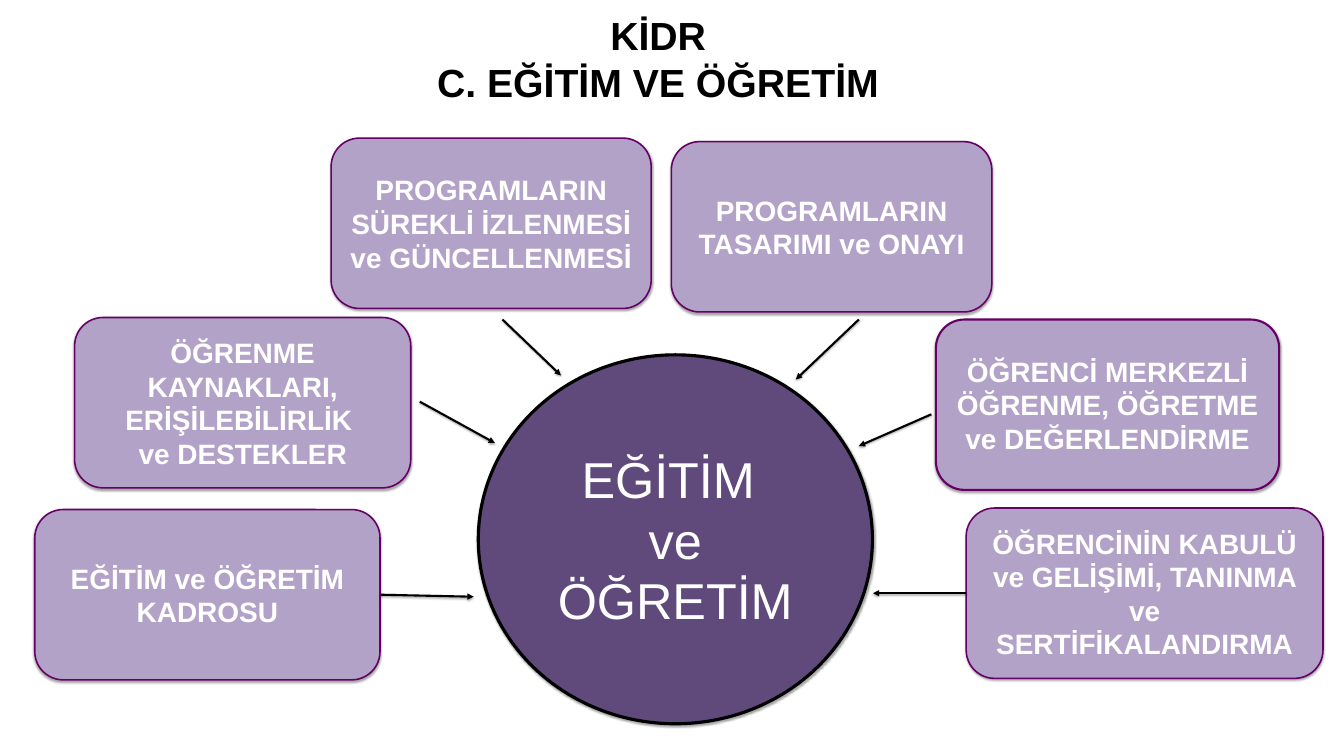
"""Build the hub diagram of the education and teaching criteria."""
from lxml import etree
from pptx import Presentation
from pptx import util as u
from pptx.dml.color import RGBColor
from pptx.enum import shapes, text
from pptx.oxml import parse_xml
from pptx.oxml.ns import nsdecls, qn

BOX_HEIGHT = 10.14
BOXES = [
    (4.44, 18.9, 20.01, 2.25, "ÖĞRENME KAYNAKLARI, ERİŞİLEBİLİRLİK \nve DESTEKLER"),
    (19.71, 8.22, 19.05, 2.25, "PROGRAMLARIN SÜREKLİ İZLENMESİ \nve GÜNCELLENMESİ"),
    (2.07, 30.33, 20.55, 2.25, "EĞİTİM ve ÖĞRETİM KADROSU"),
    (39.96, 8.43, 19.08, 2.25, "PROGRAMLARIN TASARIMI ve ONAYI"),
    (57.51, 30.24, 21.24, 2.25, "ÖĞRENCİNİN KABULÜ ve GELİŞİMİ, TANINMA ve SERTİFİKALANDIRMA"),
    (55.71, 19.02, 20.43, 3, "ÖĞRENCİ MERKEZLİ ÖĞRENME, ÖĞRETME ve DEĞERLENDİRME"),
]
ARROWS = [
    ((51.12, 19.02), (47.37, 22.59)),
    ((55.44, 24.66), (51.12, 26.55)),
    ((29.91, 19.02), (33.39, 22.35)),
    ((22.65, 35.4), (28.2, 35.52)),
    ((24.99, 23.91), (29.46, 26.37)),
    ((57.51, 35.31), (51.96, 35.31)),
]


def color(value):
    """Turn a hex string into a colour."""
    return RGBColor.from_string(value)


def write(shape, content, size, ink="FFFFFF", bold=False, anchor=text.MSO_ANCHOR.MIDDLE):
    """Fill a shape with centred paragraphs, one for each line of content."""
    frame = shape.text_frame
    frame.word_wrap = True
    frame.vertical_anchor = anchor
    frame.margin_left = frame.margin_right = u.Inches(0.2)
    frame.margin_top = frame.margin_bottom = u.Inches(0.1)
    frame.text = content
    for paragraph in frame.paragraphs:
        paragraph.alignment = text.PP_ALIGN.CENTER
        for run in paragraph.runs:
            run.font.name = "Arial"
            run.font.size = u.Pt(size)
            run.font.bold = bold
            run.font.color.rgb = color(ink)


def add_shadow(shape):
    """Give a shape or connector a soft shadow falling straight down."""
    shape._element.spPr.append(parse_xml(
        f'<a:effectLst {nsdecls("a")}>'
        f'<a:outerShdw blurRad="{u.Pt(3.1)}" dist="{u.Pt(1.8)}" dir="5400000" rotWithShape="0">'
        '<a:srgbClr val="000000"><a:alpha val="35000"/></a:srgbClr>'
        '</a:outerShdw></a:effectLst>'))


class Diagram:
    """Hold the style and the current slide on a grid of 80 columns by 45 rows."""

    columns, rows = 80, 45
    box_fill, box_line = "B3A2C7", "660066"
    hub_fill, dark = "604A7B", "000000"

    def __init__(self, presentation):
        """Add a blank slide and work out the grid step."""
        self.slide = presentation.slides.add_slide(presentation.slide_layouts[6])
        self.column = presentation.slide_width / self.columns
        self.row = presentation.slide_height / self.rows

    def place(self, *lengths):
        """Turn alternating columns and rows into slide lengths."""
        return [round(length * (self.row if index % 2 else self.column))
                for index, length in enumerate(lengths)]

    def title(self, area, content):
        """Add the heading."""
        box = self.slide.shapes.add_textbox(*self.place(*area))
        write(box, content, 56, ink=self.dark, bold=True, anchor=text.MSO_ANCHOR.TOP)

    def node(self, kind, area, fill, line, weight):
        """Add a filled, outlined shape with a shadow."""
        shape = self.slide.shapes.add_shape(kind, *self.place(*area))
        shape.fill.solid()
        shape.fill.fore_color.rgb = color(fill)
        shape.line.color.rgb = color(line)
        shape.line.width = u.Pt(weight)
        add_shadow(shape)
        return shape

    def box(self, left, top, width, weight, content):
        """Add a rounded criterion box."""
        area = (left, top, width, BOX_HEIGHT)
        shape = self.node(shapes.MSO_SHAPE.ROUNDED_RECTANGLE, area,
                          self.box_fill, self.box_line, weight)
        write(shape, content, 40, bold=True)

    def hub(self, area, content):
        """Add the central ellipse."""
        shape = self.node(shapes.MSO_SHAPE.OVAL, area, self.hub_fill, self.dark, 4.5)
        write(shape, content, 72)

    def arrow(self, start, end):
        """Add an arrow pointing at its end."""
        arrow = self.slide.shapes.add_connector(
            shapes.MSO_CONNECTOR.STRAIGHT, *self.place(*start, *end))
        arrow.line.color.rgb = color(self.dark)
        arrow.line.width = u.Pt(3)
        etree.SubElement(arrow.line._get_or_add_ln(), qn("a:tailEnd"), type="triangle")
        add_shadow(arrow)


def main():
    """Draw the slide and save it."""
    presentation = Presentation()
    presentation.slide_width = u.Inches(26.67)
    presentation.slide_height = u.Inches(15)
    diagram = Diagram(presentation)
    diagram.title((7.86, 0.39, 62.64, 6.27), "KİDR\nC. EĞİTİM VE ÖĞRETİM")
    for box in BOXES:
        diagram.box(*box)
    diagram.hub((28.47, 21.12, 23.46, 21.96), "EĞİTİM \nve ÖĞRETİM")
    for start, end in ARROWS:
        diagram.arrow(start, end)
    presentation.save("out.pptx")


if __name__ == "__main__":
    main()
